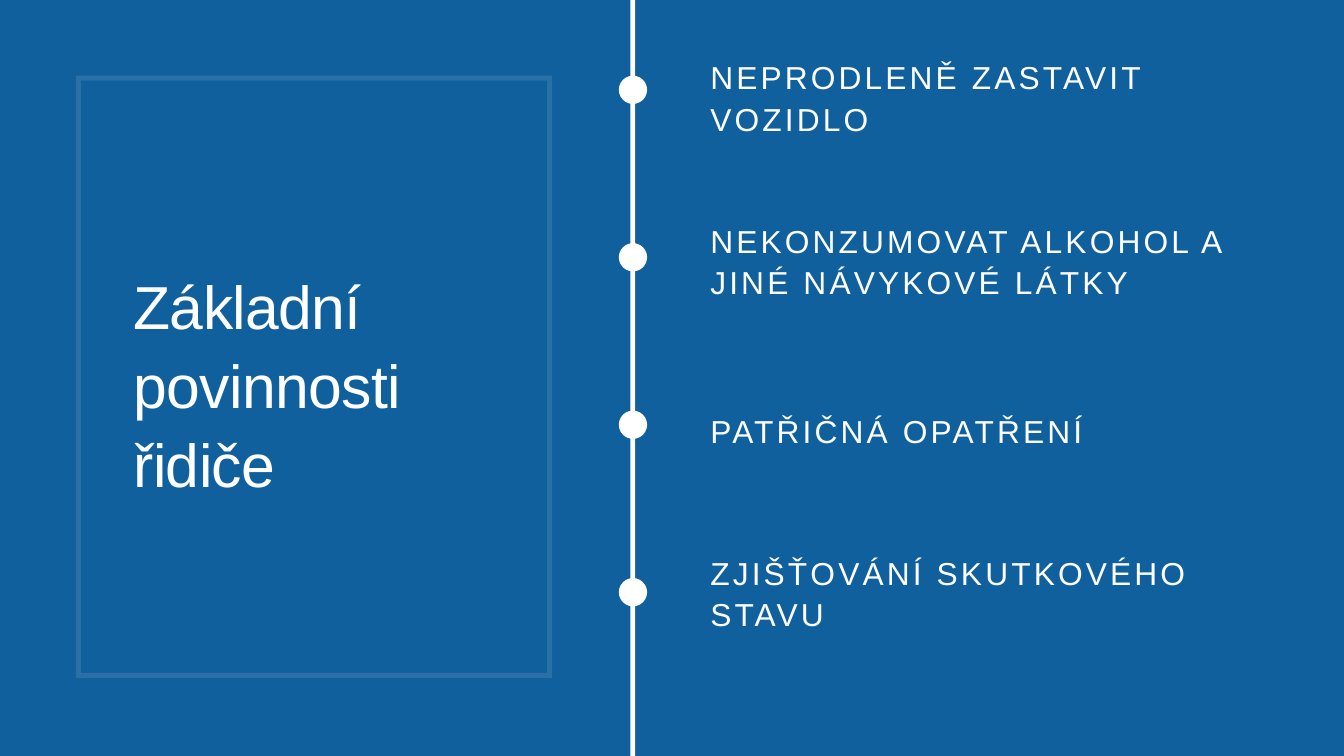
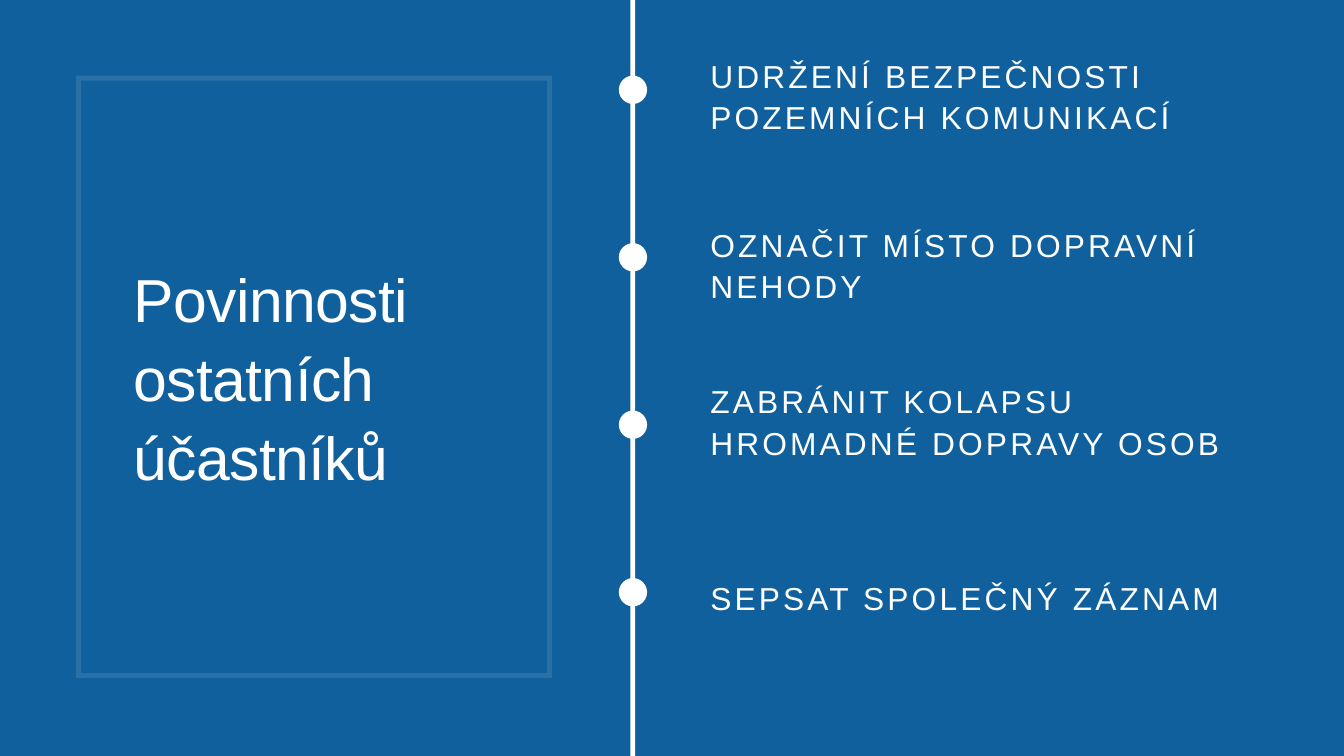
import pptx
import pptx.dml.color
import pptx.enum.shapes
import pptx.enum.text
import pptx.oxml
import pptx.oxml.ns
import pptx.util

Cm, Pt = pptx.util.Cm, pptx.util.Pt
MSO_SHAPE = pptx.enum.shapes.MSO_SHAPE
BLUE = pptx.dml.color.RGBColor(0x10, 0x60, 0x9D)
WHITE = pptx.dml.color.RGBColor(0xFF, 0xFF, 0xFF)

TITLE_STYLE = {"size": 65, "leading": 84.5, "tracking": -0.7}
DUTY_STYLE = {"size": 34, "leading": 44.2, "tracking": 3.4}

FRAME_LEFT, FRAME_TOP, FRAME_WIDTH, FRAME_HEIGHT = 2.87, 2.86, 18, 22.76
FRAME_EDGE = 0.19
DOT_LEFT, DOT_TOP, DOT_SIZE, DOT_STEP = 23.39, 2.86, 1.07, 6.33

# Each title and duty: text, top and height in cm
SLIDES = [
    (("Základní povinnosti řidiče", 9.93, 9.02), [
        ("NEPRODLENĚ ZASTAVIT VOZIDLO", 2.08, 3.1),
        ("NEKONZUMOVAT ALKOHOL A JINÉ NÁVYKOVÉ LÁTKY", 8.26, 3.1),
        ("PATŘIČNÁ OPATŘENÍ", 15.44, 1.52),
        ("ZJIŠŤOVÁNÍ SKUTKOVÉHO STAVU", 20.8, 3.1),
    ]),
    (("Povinnosti ostatních účastníků", 9.68, 8.92), [
        ("UDRŽENÍ BEZPEČNOSTI POZEMNÍCH KOMUNIKACÍ", 2.03, 3.1),
        ("OZNAČIT MÍSTO DOPRAVNÍ NEHODY", 8.41, 3.1),
        ("ZABRÁNIT KOLAPSU HROMADNÉ DOPRAVY OSOB", 14.33, 3.1),
        ("SEPSAT SPOLEČNÝ ZÁZNAM", 21.77, 1.52),
    ]),
]


def paint_white(shape):
    shape.shadow.inherit = False
    shape.fill.solid()
    shape.fill.fore_color.rgb = WHITE
    shape.line.fill.background()


def add_text(slide, text, left, top, width, height, style):
    box = slide.shapes.add_textbox(Cm(left), Cm(top), Cm(width), Cm(height))
    frame = box.text_frame
    for name, value in {"margin_left": 0, "margin_top": 0, "margin_right": 0,
                        "margin_bottom": 0, "word_wrap": True}.items():
        setattr(frame, name, value)
    frame.auto_size = pptx.enum.text.MSO_AUTO_SIZE.SHAPE_TO_FIT_TEXT
    paragraph = frame.paragraphs[0]
    paragraph.line_spacing = Pt(style["leading"])
    run = paragraph.add_run()
    run.text = text
    run.font.name = "Arial"
    run.font.size = Pt(style["size"])
    run.font.color.rgb = WHITE
    run._r.get_or_add_rPr().set("spc", str(round(style["tracking"] * 100)))


deck = pptx.Presentation()
deck.slide_width = pptx.util.Inches(20)
deck.slide_height = pptx.util.Inches(11.25)

for (title, title_top, title_height), duties in SLIDES:
    slide = deck.slides.add_slide(deck.slide_layouts[6])
    slide.background.fill.solid()
    slide.background.fill.fore_color.rgb = BLUE

    # The inner contour runs the other way round, which leaves a hole
    left, top = Cm(FRAME_LEFT), Cm(FRAME_TOP)
    right, bottom = left + Cm(FRAME_WIDTH), top + Cm(FRAME_HEIGHT)
    edge = Cm(FRAME_EDGE)
    outline = slide.shapes.build_freeform(left, top)
    outline.add_line_segments([(right, top), (right, bottom), (left, bottom)])
    outline.move_to(left + edge, top + edge)
    outline.add_line_segments([(left + edge, bottom - edge),
                               (right - edge, bottom - edge),
                               (right - edge, top + edge)])
    border = outline.convert_to_shape()
    paint_white(border)
    color = border._element.spPr.find(
        pptx.oxml.ns.qn("a:solidFill") + "/" + pptx.oxml.ns.qn("a:srgbClr"))
    color.append(pptx.oxml.parse_xml(
        f'<a:alpha {pptx.oxml.ns.nsdecls("a")} val="10000"/>'))

    add_text(slide, title, 5.05, title_top, 13.59, title_height, TITLE_STYLE)

    timeline = slide.shapes.add_shape(
        MSO_SHAPE.RECTANGLE, Cm(23.83), Cm(-0.46), Cm(0.18), Cm(29.77))
    paint_white(timeline)

    for index, (duty, duty_top, duty_height) in enumerate(duties):
        dot = slide.shapes.add_shape(
            MSO_SHAPE.OVAL, Cm(DOT_LEFT), Cm(DOT_TOP + index * DOT_STEP),
            Cm(DOT_SIZE), Cm(DOT_SIZE))
        paint_white(dot)
        add_text(slide, duty, 26.85, duty_top, 21.08, duty_height, DUTY_STYLE)

deck.save("out.pptx")
